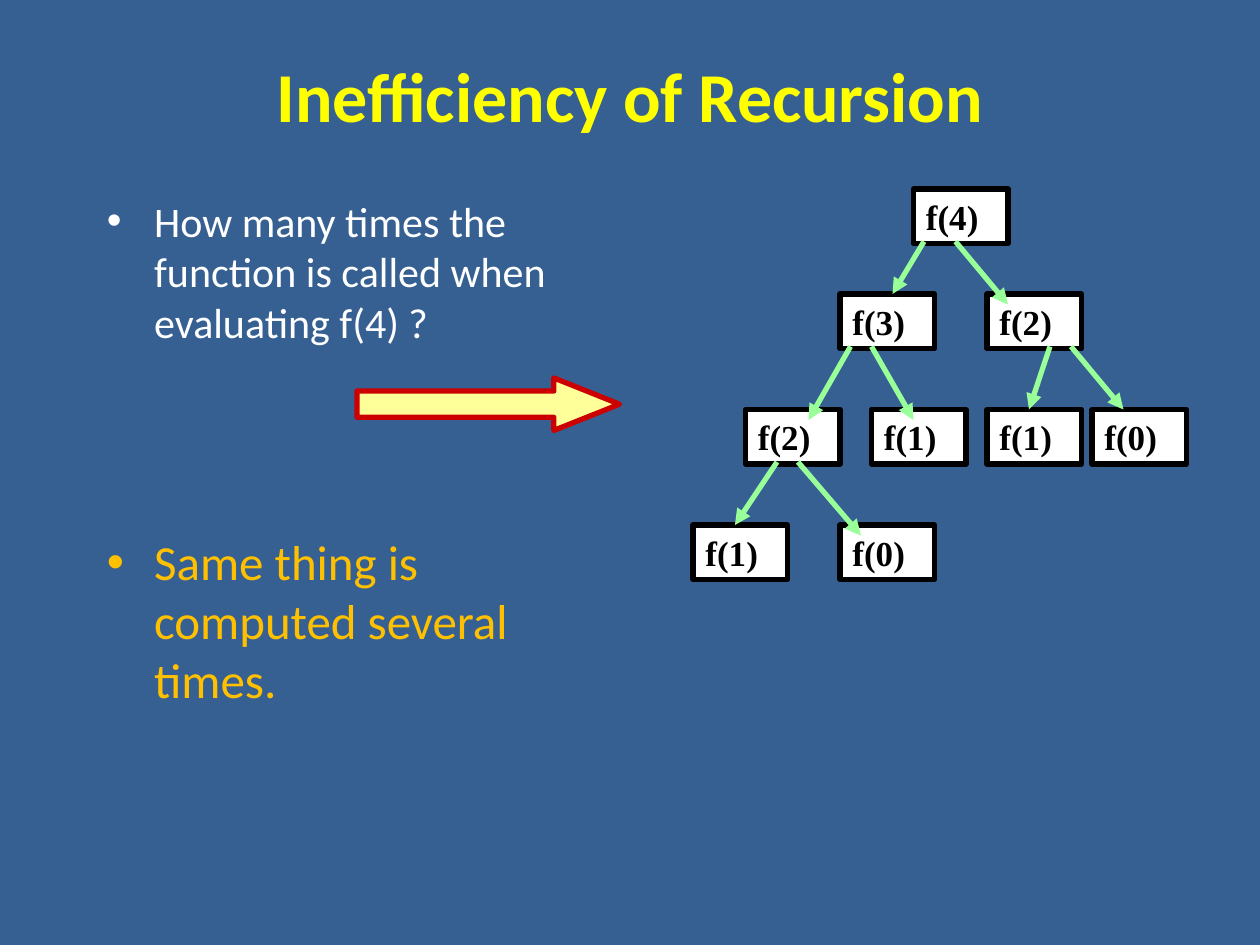
from dataclasses import dataclass

from pptx import Presentation
from pptx import util as u
from pptx.dml.color import RGBColor
from pptx.enum import shapes, text
from pptx.oxml.ns import qn

PX = u.Inches(1) // 120  # one px is 1/120 inch

BLUE = RGBColor(0x37, 0x60, 0x92)
YELLOW = RGBColor(0xFF, 0xFF, 0x00)
PALE_YELLOW = RGBColor(0xFF, 0xFF, 0x99)
GOLD = RGBColor(0xFF, 0xC0, 0x00)
RED = RGBColor(0xCC, 0x00, 0x00)
GREEN = RGBColor(0x99, 0xFF, 0x99)
WHITE = RGBColor(0xFF, 0xFF, 0xFF)
BLACK = RGBColor(0x00, 0x00, 0x00)

LINE_WIDTH = u.Pt(3)
NODE_WIDTH, NODE_HEIGHT = 90, 52


@dataclass(frozen=True)
class Call:
    label: str
    left: int
    top: int


@dataclass(frozen=True)
class Edge:
    x1: int
    y1: int
    x2: int
    y2: int


@dataclass(frozen=True)
class Bullet:
    words: str
    size: int
    color: RGBColor
    space_before: int


CALLS = [
    Call("f(4)", 870, 180),
    Call("f(3)", 800, 280),
    Call("f(2)", 940, 280),
    Call("f(2)", 710, 390),
    Call("f(1)", 830, 390),
    Call("f(1)", 940, 390),
    Call("f(0)", 1040, 390),
    Call("f(1)", 660, 500),
    Call("f(0)", 800, 500),
]

EDGES = [
    Edge(880, 230, 850, 280),
    Edge(910, 230, 960, 290),
    Edge(810, 330, 770, 400),
    Edge(830, 330, 870, 400),
    Edge(1000, 330, 980, 390),
    Edge(1020, 330, 1070, 390),
    Edge(740, 440, 700, 500),
    Edge(760, 440, 820, 510),
]

BULLETS = [
    Bullet("How many times the function is called when evaluating f(4) ?", 24, WHITE, 0),
    Bullet("Same thing is computed several times.", 28, GOLD, 106),
]


def place(left: int, top: int, width: int, height: int) -> tuple:
    return left * PX, top * PX, width * PX, height * PX


def format_runs(para, font: str, size: int, color: RGBColor, bold: bool = False) -> None:
    for span in para.runs:
        span.font.name = font
        span.font.size = u.Pt(size)
        span.font.bold = bold
        span.font.color.rgb = color


def add_outlined(page, kind, area: tuple, fill: RGBColor, line: RGBColor):
    shape = page.shapes.add_shape(kind, *area)
    shape.shadow.inherit = False
    shape.fill.solid()
    shape.fill.fore_color.rgb = fill
    shape.line.color.rgb = line
    shape.line.width = LINE_WIDTH
    return shape


def add_call(page, call: Call) -> None:
    area = place(call.left, call.top, NODE_WIDTH, NODE_HEIGHT)
    box = add_outlined(page, shapes.MSO_SHAPE.RECTANGLE, area, WHITE, BLACK)
    frame = box.text_frame
    frame.text = call.label
    frame.vertical_anchor = text.MSO_ANCHOR.TOP
    frame.auto_size = text.MSO_AUTO_SIZE.SHAPE_TO_FIT_TEXT
    para = frame.paragraphs[0]
    para.alignment = text.PP_ALIGN.LEFT
    format_runs(para, "Times New Roman", 20, BLACK, bold=True)


def add_edge(page, edge: Edge) -> None:
    ends = (v * PX for v in (edge.x1, edge.y1, edge.x2, edge.y2))
    line = page.shapes.add_connector(shapes.MSO_CONNECTOR.STRAIGHT, *ends)
    line.line.color.rgb = GREEN
    line.line.width = LINE_WIDTH
    # Arrowhead at the called function, and no shadow
    outline = line.line._get_or_add_ln()
    outline.append(outline.makeelement(qn("a:tailEnd"), {"type": "triangle"}))
    properties = line._element.spPr
    properties.append(properties.makeelement(qn("a:effectLst"), {}))


def add_bullets(page, bullets: list[Bullet]) -> None:
    box = page.shapes.add_textbox(*place(90, 180, 500, 620))
    frame = box.text_frame
    frame.word_wrap = True
    frame.text = "\n".join(bullet.words for bullet in bullets)
    for para, bullet in zip(frame.paragraphs, bullets):
        para.space_before = u.Pt(bullet.space_before)
        format_runs(para, "Calibri", bullet.size, bullet.color)
        settings = para._p.get_or_add_pPr()
        settings.set("marL", str(45 * PX))
        settings.set("indent", str(-45 * PX))
        for tag, attributes in (
            ("a:buFont", {"typeface": "Arial"}),
            ("a:buChar", {"char": "•"}),
        ):
            settings.append(settings.makeelement(qn(tag), attributes))


def add_title(page, words: str) -> None:
    title = page.shapes.title
    title.left, title.top, title.width, title.height = place(90, 40, 1020, 100)
    frame = title.text_frame
    frame.text = words
    frame.vertical_anchor = text.MSO_ANCHOR.MIDDLE
    para = frame.paragraphs[0]
    para.alignment = text.PP_ALIGN.CENTER
    format_runs(para, "Calibri", 40, YELLOW, bold=True)


def main() -> None:
    deck = Presentation()
    deck.slide_width, deck.slide_height = 1200 * PX, 900 * PX
    page = deck.slides.add_slide(deck.slide_layouts.get_by_name("Title Only"))
    page.background.fill.solid()
    page.background.fill.fore_color.rgb = BLUE

    add_title(page, "Inefficiency of Recursion")
    add_bullets(page, BULLETS)

    # Call tree
    for call in CALLS:
        add_call(page, call)
    for edge in EDGES:
        add_edge(page, edge)

    # Arrow from the question to the tree
    arrow = add_outlined(
        page, shapes.MSO_SHAPE.RIGHT_ARROW, place(340, 360, 250, 50), PALE_YELLOW, RED
    )
    arrow.adjustments[0] = 0.5
    arrow.adjustments[1] = 1.25

    deck.save("out.pptx")


if __name__ == "__main__":
    main()
